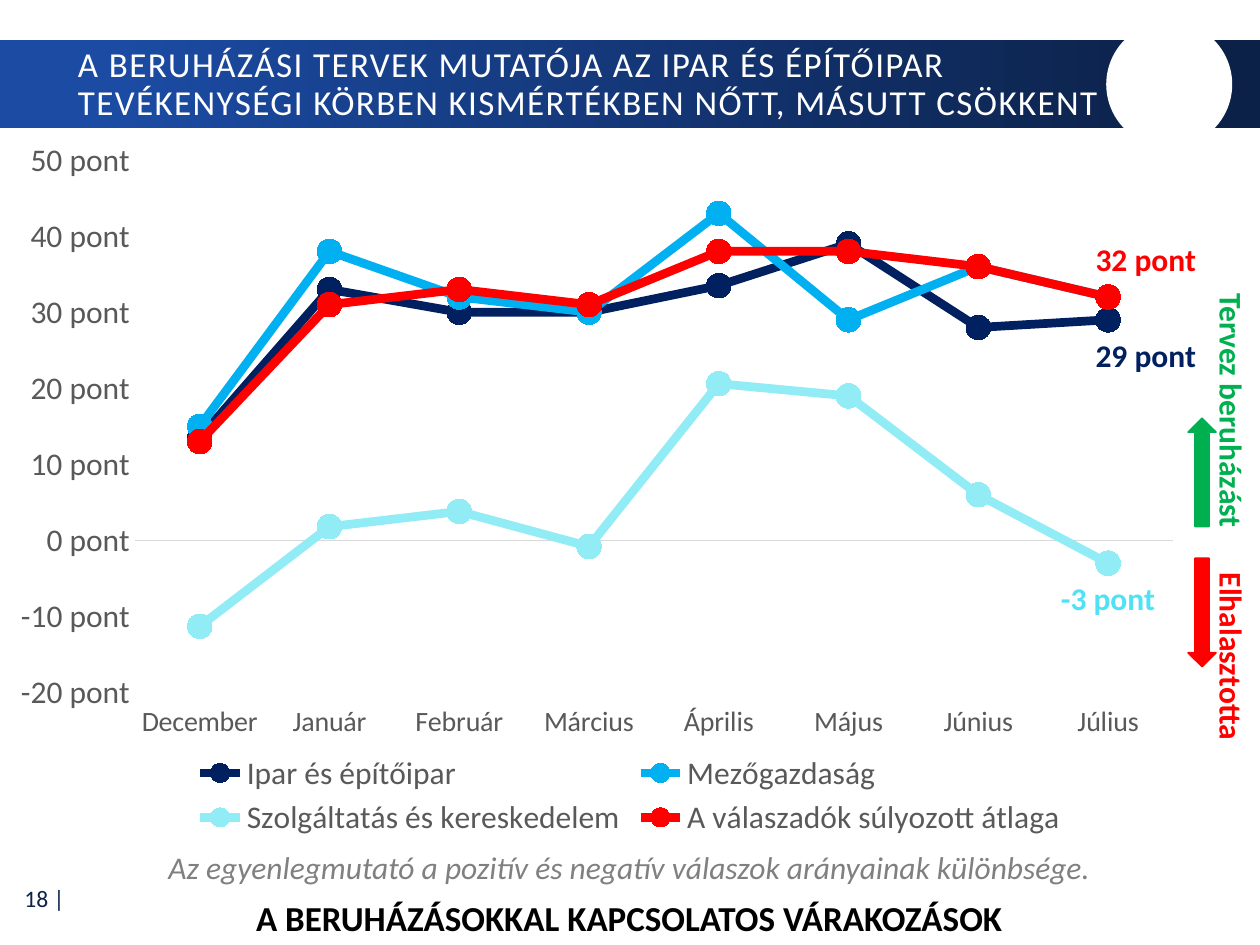
import pptx
import pptx.chart.data
import pptx.util
from lxml import etree
from pptx.dml.color import RGBColor
from pptx.enum.chart import (XL_CHART_TYPE, XL_LABEL_POSITION, XL_LEGEND_POSITION,
                             XL_MARKER_STYLE, XL_TICK_LABEL_POSITION, XL_TICK_MARK)
from pptx.enum.shapes import MSO_SHAPE
from pptx.enum.text import MSO_ANCHOR, PP_ALIGN
from pptx.oxml import parse_xml
from pptx.oxml.ns import nsdecls
from pptx.util import Inches, Pt

NAVY = RGBColor(0x0C, 0x21, 0x48)
BLUE = RGBColor(0x1B, 0x4B, 0xA3)
WHITE = RGBColor(0xFF, 0xFF, 0xFF)
BLACK = RGBColor(0, 0, 0)
GRAY = RGBColor(0x80, 0x80, 0x80)
AXIS_TEXT = RGBColor(0x59, 0x59, 0x59)
AXIS_LINE = RGBColor(0xD9, 0xD9, 0xD9)
GREEN = RGBColor(0x00, 0xB0, 0x50)
RED = RGBColor(0xFF, 0, 0)
DARK_BLUE = RGBColor(0x00, 0x20, 0x60)
SKY = RGBColor(0x00, 0xB0, 0xF0)
PALE_CYAN = RGBColor(0x92, 0xEC, 0xF6)
CYAN = RGBColor(0x4F, 0xE2, 0xF6)

FONT = "Calibri"
POINT_FORMAT = '0\\ "pont"'
TITLE = ("A BERUHÁZÁSI TERVEK MUTATÓJA AZ IPAR ÉS ÉPÍTŐIPAR "
         "TEVÉKENYSÉGI KÖRBEN KISMÉRTÉKBEN NŐTT, MÁSUTT CSÖKKENT")
NOTE = "Az egyenlegmutató a pozitív és negatív válaszok arányainak különbsége."
TOPIC = "A BERUHÁZÁSOKKAL KAPCSOLATOS VÁRAKOZÁSOK"
MONTHS = ["December", "Január", "Február", "Március", "Április", "Május", "Június", "Július"]
ABOVE, BELOW = XL_LABEL_POSITION.ABOVE, XL_LABEL_POSITION.BELOW
# name, values, colour, label of the last point (colour, position, x shift)
SERIES = [
    ("Ipar és építőipar", [13.5, 33, 30, 30, 33.5, 39, 28, 29], DARK_BLUE,
     (DARK_BLUE, BELOW, 0.03)),
    ("Mezőgazdaság", [15, 38, 32, 30, 43, 29, 36, 32], SKY, None),
    ("Szolgáltatás és kereskedelem", [-11.3, 1.8, 3.8, -0.8, 20.6, 19, 6, -3], PALE_CYAN,
     (CYAN, BELOW, 0)),
    ("A válaszadók súlyozott átlaga", [13, 31, 33, 31, 38, 38, 36, 32], RED,
     (RED, ABOVE, 0.03)),
]
# text, colour, centre of the text, top of the arrow, arrow rotation
DIRECTIONS = [
    ("Tervez beruházást", GREEN, 3.26, 3.32, 0),
    ("Elhalasztotta", RED, 5.21, 4.43, 180),
]


def style_font(font, size, color, bold=False, italic=False):
    font.name, font.size, font.bold, font.italic = FONT, Pt(size), bold, italic
    font.color.rgb = color


def add_text(slide, box, lines, align, anchor=MSO_ANCHOR.MIDDLE):
    """Add a text box; each line is (text, size, colour, bold, italic)."""
    shape = slide.shapes.add_textbox(*map(Inches, box))
    frame = shape.text_frame
    frame.word_wrap = True
    frame.vertical_anchor = anchor
    for index, (text, *style) in enumerate(lines):
        paragraph = frame.add_paragraph() if index else frame.paragraphs[0]
        paragraph.text = text
        paragraph.alignment = align
        style_font(paragraph.font, *style)
    return shape


def add_shape(slide, kind, box, color):
    shape = slide.shapes.add_shape(kind, *map(Inches, box))
    shape.shadow.inherit = False
    shape.fill.solid()
    shape.fill.fore_color.rgb = color
    shape.line.fill.background()
    return shape


def manual_layout(x, y, size=None):
    """Layout element: a shift, or with a size the inner plot rectangle."""
    parts = [("x", x), ("y", y)]
    head = ""
    if size:
        head = ('<c:layoutTarget val="inner"/><c:xMode val="edge"/>'
                '<c:yMode val="edge"/>')
        parts += [("w", size[0]), ("h", size[1])]
    body = "".join(f'<c:{tag} val="{value}"/>' for tag, value in parts)
    return parse_xml(f'<c:layout {nsdecls("c")}><c:manualLayout>{head}{body}'
                     '</c:manualLayout></c:layout>')


def add_header(slide):
    band = add_shape(slide, MSO_SHAPE.RECTANGLE, (0, 0.32, 10, 0.7), NAVY)
    band.fill.gradient()
    band.fill.gradient_angle = 0
    for stop, position, color in zip(band.fill.gradient_stops, (0.09, 0.95), (BLUE, NAVY)):
        stop.position = position
        stop.color.rgb = color
    add_shape(slide, MSO_SHAPE.OVAL, (8.78, 0.17, 1, 1), WHITE)
    title = add_text(slide, (0.52, 0.34, 8.32, 0.67), [(TITLE, 20, WHITE)], PP_ALIGN.LEFT)
    paragraph = title.text_frame.paragraphs[0]
    paragraph.line_spacing = 0.9
    paragraph.runs[0].font._element.set("spc", "80")


def add_line_chart(slide):
    data = pptx.chart.data.CategoryChartData(number_format=POINT_FORMAT)
    data.categories = MONTHS
    for name, values, *_ in SERIES:
        data.add_series(name, values)
    chart = slide.shapes.add_chart(XL_CHART_TYPE.LINE_MARKERS, Inches(0), Inches(1.01),
                                   Inches(10), Inches(5.68), data).chart
    style_font(chart.font, 18, BLACK)
    chart.has_title = False
    chart.has_legend = True
    chart.legend.position = XL_LEGEND_POSITION.BOTTOM
    chart.legend.include_in_layout = False
    style_font(chart.legend.font, 18, AXIS_TEXT)

    months, points = chart.category_axis, chart.value_axis
    for axis, size in ((months, 16), (points, 18)):
        axis.major_tick_mark = axis.minor_tick_mark = XL_TICK_MARK.NONE
        axis.has_major_gridlines = False
        style_font(axis.tick_labels.font, size, AXIS_TEXT)
    months.tick_label_position = XL_TICK_LABEL_POSITION.LOW
    months.format.line.color.rgb = AXIS_LINE
    months.format.line.width = Pt(0.75)
    points.minimum_scale, points.maximum_scale, points.major_unit = -20, 50, 10
    points.tick_labels.number_format = POINT_FORMAT
    points.tick_labels.number_format_is_linked = False
    points.format.line.fill.background()

    plot = chart.plots[0]
    plot.vary_by_categories = False
    for series, (_, values, color, label) in zip(plot.series, SERIES):
        series.smooth = False
        series.format.line.color.rgb = color
        series.format.line.width = Pt(5)
        marker = series.marker
        marker.style, marker.size = XL_MARKER_STYLE.CIRCLE, 14
        marker.format.fill.solid()
        marker.format.fill.fore_color.rgb = color
        marker.format.line.color.rgb = color
        if label:
            label_color, position, shift = label
            last = len(values) - 1
            data_label = series.points[last].data_label
            style_font(data_label.font, 18, label_color, bold=True)
            data_label.position = position
            if shift:
                element = series._element.find(".//c:dLbl", series._element.nsmap)
                element.insert(1, manual_layout(shift, 0))

    area = plot._element.getparent()
    for old in area.findall("c:layout", area.nsmap):
        area.remove(old)
    area.insert(0, manual_layout(0.107, 0.046, (0.824, 0.744)))


def add_directions(slide):
    width, height, center_x = 2.2, 0.4, 9.78
    for text, color, center_y, arrow_top, rotation in DIRECTIONS:
        arrow = add_shape(slide, MSO_SHAPE.UP_ARROW, (9.43, arrow_top, 0.22, 0.86), color)
        arrow.line.color.rgb = color
        arrow.line.width = Pt(1)
        arrow.rotation = rotation
        box = (center_x - width / 2, center_y - height / 2, width, height)
        add_text(slide, box, [(text, 18, color, True)], PP_ALIGN.CENTER).rotation = 90


def main():
    presentation = pptx.Presentation()
    presentation.slide_width, presentation.slide_height = Inches(10), Inches(7.5)
    slide = presentation.slides.add_slide(presentation.slide_layouts[6])
    add_header(slide)
    add_text(slide, (0.01, 6.94, 0.6, 0.37), [("18 |", 13.5, NAVY)], PP_ALIGN.RIGHT)
    footer = add_text(slide, (0.85, 6.68, 8.29, 0.82),
                      [(NOTE, 18, GRAY, False, True), (TOPIC, 20, BLACK, True)],
                      PP_ALIGN.CENTER, MSO_ANCHOR.TOP)
    footer.text_frame.paragraphs[0].space_after = Pt(6)
    add_line_chart(slide)
    add_directions(slide)
    presentation.save("out.pptx")


if __name__ == "__main__":
    main()
